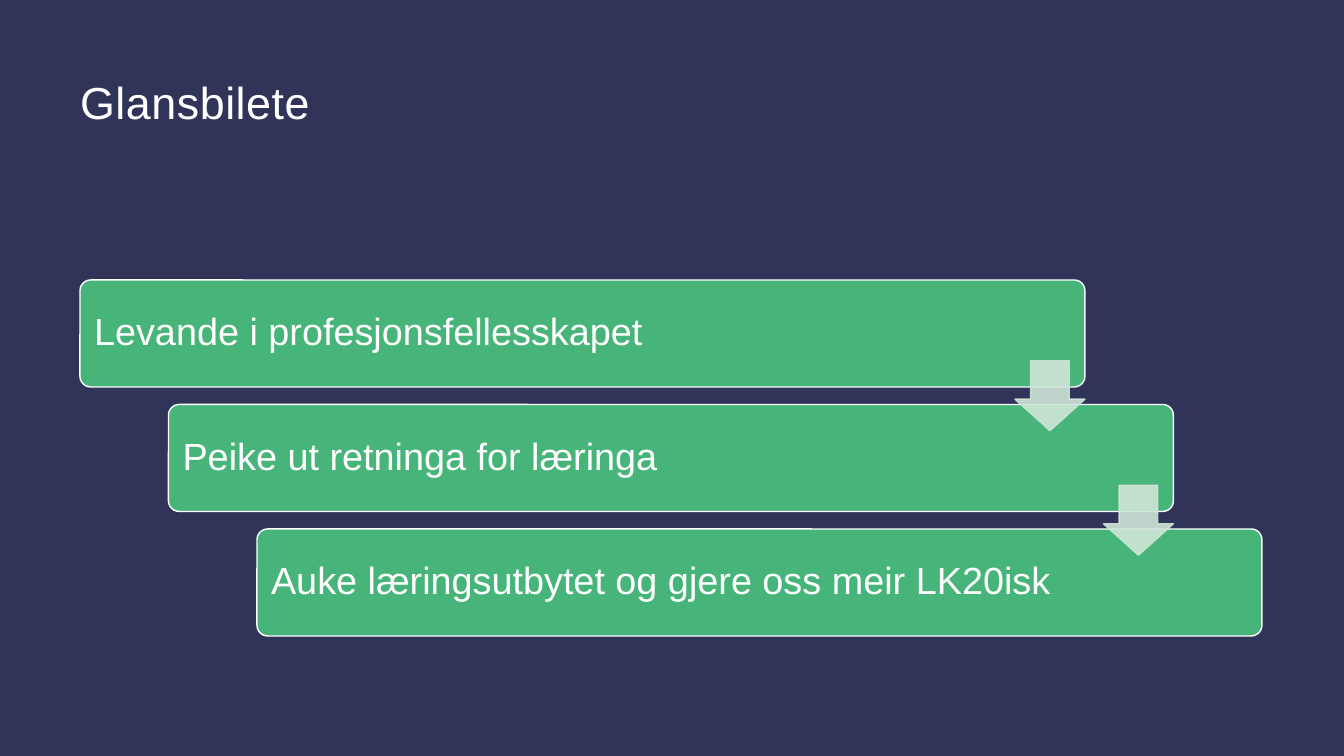
from dataclasses import dataclass

from lxml import etree
from pptx import Presentation
from pptx.dml.color import RGBColor
from pptx.enum.shapes import MSO_SHAPE as SHAPE
from pptx.enum.text import MSO_ANCHOR as ANCHOR, PP_ALIGN as ALIGN
from pptx.oxml.ns import qn
from pptx.util import Pt

PX = 914400 / 100.8
SLIDE_W, SLIDE_H = 1344, 756
STEPS = [
    "Levande i profesjonsfellesskapet",
    "Peike ut retninga for læringa",
    "Auke læringsutbytet og gjere oss meir LK20isk",
]


@dataclass(frozen=True)
class Theme:
    background: RGBColor = RGBColor.from_string("313459")
    step: RGBColor = RGBColor.from_string("47B479")
    arrow: RGBColor = RGBColor.from_string("CFE5D7")
    text: RGBColor = RGBColor.from_string("FFFFFF")
    font: str = "Arial"
    title_size: int = 32
    step_size: int = 27
    line: int = 1


THEME = Theme()


def emu(*lengths):
    return [round(n * PX) for n in lengths]


def write(sp, text, size, anchor, inset, line_spacing):
    tf = sp.text_frame
    margin, = emu(inset)
    frame = dict(word_wrap=True, vertical_anchor=anchor, margin_left=margin,
                 margin_top=margin, margin_right=margin, margin_bottom=margin)
    for name, value in frame.items():
        setattr(tf, name, value)
    p = tf.paragraphs[0]
    p.alignment, p.line_spacing = ALIGN.LEFT, line_spacing
    r = p.add_run()
    r.text = text
    for name, value in dict(name=THEME.font, size=Pt(size)).items():
        setattr(r.font, name, value)
    r.font.color.rgb = THEME.text
    return r


def add_shape(s, kind, box, fill, line, adjustments):
    sp = s.shapes.add_shape(kind, *emu(*box))
    sp.shadow.inherit = False
    sp.fill.solid()
    sp.fill.fore_color.rgb = fill
    sp.line.color.rgb = line
    sp.line.width = Pt(THEME.line)
    for i, value in enumerate(adjustments):
        sp.adjustments[i] = value
    return sp


def set_opacity(sp, percent):
    """Make the fill and the line of a shape partly transparent."""
    for color in sp._element.spPr.iter(qn("a:srgbClr")):
        etree.SubElement(color, qn("a:alpha"), val=str(percent * 1000))


def add_title(s, box, text):
    sp = s.shapes.add_textbox(*emu(*box))
    r = write(sp, text, THEME.title_size, ANCHOR.TOP, 0, 1.1)
    r._r.get_or_add_rPr().set("spc", "40")


def add_staircase(s, box, steps):
    """Place the steps diagonally across the box, with an arrow between neighbours."""
    x, y, w, h = box
    step_w, step_h = round(w * 0.85), round(h * 0.3)
    dx, dy = (w - step_w) / (len(steps) - 1), (h - step_h) / (len(steps) - 1)
    arrow = round(step_h * 0.65)

    for i, text in enumerate(steps):
        sp = add_shape(s, SHAPE.ROUNDED_RECTANGLE,
                       (x + i * dx, y + i * dy, step_w, step_h),
                       THEME.step, THEME.text, [0.1])
        write(sp, text, THEME.step_size, ANCHOR.MIDDLE, 11, 0.9)

    for i in range(len(steps) - 1):
        gap_middle = y + i * dy + (step_h + dy) / 2
        sp = add_shape(s, SHAPE.DOWN_ARROW,
                       (x + i * dx + step_w - arrow, gap_middle - arrow / 2, arrow, arrow),
                       THEME.arrow, THEME.arrow, [0.55, 0.45])
        set_opacity(sp, 90)


def main():
    prs = Presentation()
    prs.slide_width, prs.slide_height = emu(SLIDE_W, SLIDE_H)
    s = prs.slides.add_slide(prs.slide_layouts[6])
    s.background.fill.solid()
    s.background.fill.fore_color.rgb = THEME.background
    add_title(s, (80, 69, 1182, 163), "Glansbilete")
    add_staircase(s, (80, 280, 1182, 356), STEPS)
    prs.save("out.pptx")


if __name__ == "__main__":
    main()
